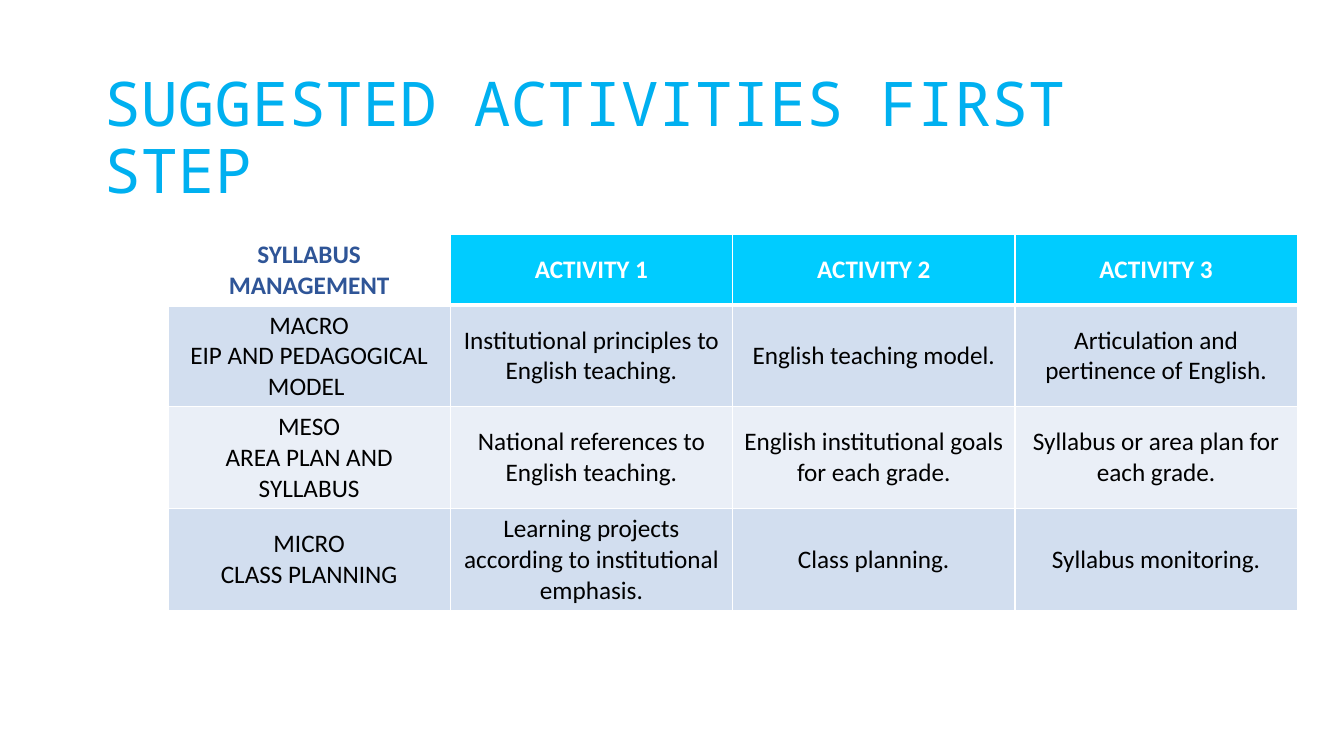
from dataclasses import dataclass
from typing import Optional

from lxml.etree import SubElement
from pptx import Presentation
from pptx.dml.color import RGBColor
from pptx.enum.text import MSO_ANCHOR as Anchor, PP_ALIGN as Align
from pptx.oxml.ns import qn
from pptx.util import Inches, Pt

SLIDE_WIDTH, SLIDE_HEIGHT = Inches(13.33), Inches(7.5)

WHITE = RGBColor(0xFF, 0xFF, 0xFF)
BLACK = RGBColor(0x00, 0x00, 0x00)
TITLE_BLUE = RGBColor(0x00, 0xB0, 0xF0)
HEADER_CYAN = RGBColor(0x00, 0xCC, 0xFF)
CORNER_BLUE = RGBColor(0x2F, 0x55, 0x97)
BAND_DARK = RGBColor(0xD2, 0xDE, 0xEF)
BAND_LIGHT = RGBColor(0xEA, 0xEF, 0xF7)

HEADER_HEIGHT, BODY_HEIGHT = Inches(0.7), Inches(1.01)
COLUMN_WIDTH = Inches(2.8)


@dataclass(frozen=True)
class CellStyle:
    fill: Optional[RGBColor]
    color: RGBColor
    bold: bool = False
    top_line: float = 1
    bottom_line: float = 1


CORNER = CellStyle(None, CORNER_BLUE, True, bottom_line=3)
HEADER = CellStyle(HEADER_CYAN, WHITE, True, bottom_line=3)
FIRST_BODY = CellStyle(BAND_DARK, BLACK, top_line=3)
LIGHT_BODY = CellStyle(BAND_LIGHT, BLACK)
DARK_BODY = CellStyle(BAND_DARK, BLACK)


@dataclass(frozen=True)
class ActivityRow:
    level: str
    activities: tuple[str, str, str]
    level_style: CellStyle
    style: CellStyle


ROWS = (
    ActivityRow("SYLLABUS MANAGEMENT", ("ACTIVITY 1", "ACTIVITY 2", "ACTIVITY 3"),
                CORNER, HEADER),
    ActivityRow("MACRO\nEIP AND PEDAGOGICAL MODEL ",
                ("Institutional principles to English teaching.",
                 "English teaching model.",
                 "Articulation and pertinence of English."),
                FIRST_BODY, FIRST_BODY),
    ActivityRow("MESO\nAREA PLAN AND SYLLABUS",
                ("National references to English teaching.",
                 "English institutional goals for each grade.",
                 "Syllabus or area plan for each grade."),
                LIGHT_BODY, LIGHT_BODY),
    ActivityRow("MICRO\nCLASS PLANNING",
                ("Learning projects according to institutional emphasis.",
                 "Class planning.",
                 "Syllabus monitoring."),
                DARK_BODY, DARK_BODY),
)


def across(share: float) -> int:
    return round(SLIDE_WIDTH * share)


def down(share: float) -> int:
    return round(SLIDE_HEIGHT * share)


def add_borders(cell, style: CellStyle) -> None:
    properties = cell._tc.get_or_add_tcPr()
    widths = {"a:lnL": 1, "a:lnR": 1, "a:lnT": style.top_line, "a:lnB": style.bottom_line}
    for tag, width in widths.items():
        line = SubElement(properties, qn(tag), w=str(Pt(width)))
        fill = SubElement(line, qn("a:solidFill"))
        SubElement(fill, qn("a:srgbClr"), val=str(WHITE))


def fill_cell(cell, text: str, style: CellStyle) -> None:
    add_borders(cell, style)
    if style.fill is None:
        cell.fill.background()
    else:
        cell.fill.solid()
        cell.fill.fore_color.rgb = style.fill
    cell.vertical_anchor = Anchor.MIDDLE
    cell.text_frame.text = text
    for paragraph in cell.text_frame.paragraphs:
        paragraph.alignment = Align.CENTER
        for run in paragraph.runs:
            run.font.name, run.font.size = "Calibri", Pt(18)
            run.font.bold = style.bold
            run.font.color.rgb = style.color


def add_title(slide, text: str) -> None:
    shape = slide.shapes.add_textbox(across(0.07), down(0.09), across(0.86), down(0.19))
    text_frame = shape.text_frame
    text_frame.word_wrap = True
    text_frame.vertical_anchor = Anchor.MIDDLE
    text_frame.text = text
    paragraph = text_frame.paragraphs[0]
    paragraph.line_spacing = 0.9
    font = paragraph.runs[0].font
    font.name, font.size = "Noto Sans Mono", Pt(44)
    font.color.rgb = TITLE_BLUE


def add_activity_table(slide, rows: tuple[ActivityRow, ...]) -> None:
    column_count = 1 + len(rows[0].activities)
    height = HEADER_HEIGHT + BODY_HEIGHT * (len(rows) - 1)
    table = slide.shapes.add_table(len(rows), column_count, across(0.125), down(0.31),
                                   COLUMN_WIDTH * column_count, height).table
    for index, row in enumerate(rows):
        table.rows[index].height = BODY_HEIGHT if index else HEADER_HEIGHT
        fill_cell(table.cell(index, 0), row.level, row.level_style)
        for column, activity in enumerate(row.activities, start=1):
            fill_cell(table.cell(index, column), activity, row.style)


def main() -> None:
    presentation = Presentation()
    presentation.slide_width, presentation.slide_height = SLIDE_WIDTH, SLIDE_HEIGHT
    slide = presentation.slides.add_slide(presentation.slide_layouts[6])

    # Title
    add_title(slide, "SUGGESTED ACTIVITIES FIRST STEP")

    # Activities by level of syllabus management
    add_activity_table(slide, ROWS)

    presentation.save("out.pptx")


if __name__ == "__main__":
    main()
